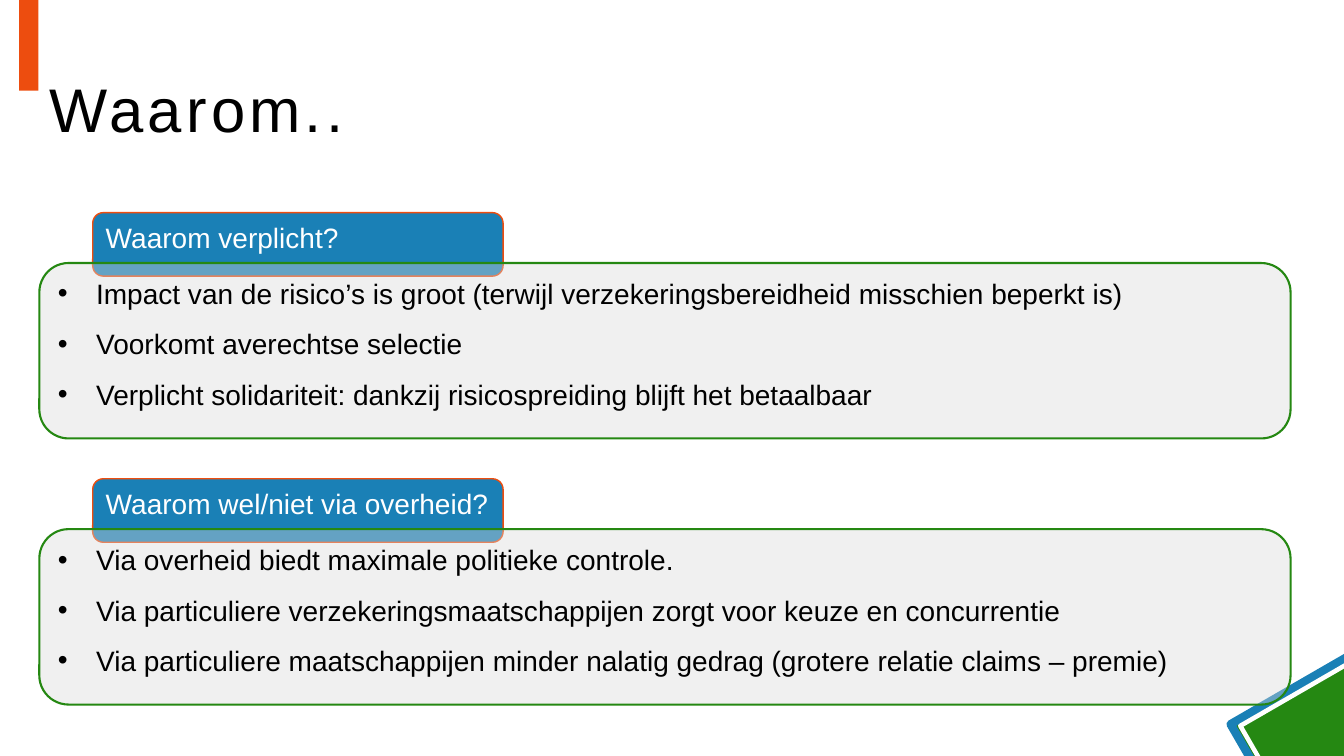
import pptx
import pptx.dml.color
import pptx.enum.shapes
import pptx.enum.text
import pptx.oxml.ns
import pptx.util
from lxml import etree

Inches, Pt = pptx.util.Inches, pptx.util.Pt
RGBColor = pptx.dml.color.RGBColor
Shape = pptx.enum.shapes.MSO_SHAPE
Anchor = pptx.enum.text.MSO_ANCHOR
Align = pptx.enum.text.PP_ALIGN
qn = pptx.oxml.ns.qn

# Content
TITLE = "Waarom.."
SECTIONS = [
    ("Waarom verplicht?", [
        "Impact van de risico’s is groot (terwijl verzekeringsbereidheid misschien beperkt is)",
        "Voorkomt averechtse selectie",
        "Verplicht solidariteit: dankzij risicospreiding blijft het betaalbaar",
    ]),
    ("Waarom wel/niet via overheid?", [
        "Via overheid biedt maximale politieke controle.",
        "Via particuliere verzekeringsmaatschappijen zorgt voor keuze en concurrentie",
        "Via particuliere maatschappijen minder nalatig gedrag (grotere relatie claims – premie)",
    ]),
]

# Style
FONT = "Arial"
BLACK = RGBColor(0x00, 0x00, 0x00)
WHITE = RGBColor(0xFF, 0xFF, 0xFF)
GREEN = RGBColor(0x25, 0x88, 0x12)
BLUE = RGBColor(0x1A, 0x80, 0xB6)
ORANGE = RGBColor(0xED, 0x4D, 0x0F)
GREY = RGBColor(0xD9, 0xD9, 0xD9)

# Layout in inches
FIRST_TOP, SECTION_STEP = 2.11, 2.64
PANEL_OFFSET = 0.5
BULLET_INDENT = 0.38


def add_block(page, kind, place, fill=None, line=None, width=0):
    block = page.shapes.add_shape(kind, *map(Inches, place))
    block.shadow.inherit = False
    if fill is None:
        block.fill.background()
    else:
        block.fill.solid()
        block.fill.fore_color.rgb = fill
    if line is None:
        block.line.fill.background()
    else:
        block.line.color.rgb = line
        block.line.width = Pt(width)
    return block


def style_font(para, size, color):
    para.font.name = FONT
    para.font.size = Pt(size)
    para.font.color.rgb = color


def write_lines(block, lines, color):
    frame = block.text_frame
    frame.word_wrap = True
    frame.vertical_anchor = Anchor.TOP
    for number, line in enumerate(lines):
        para = frame.add_paragraph() if number else frame.paragraphs[0]
        para.text = line
        para.alignment = Align.LEFT
        style_font(para, 20, color)


def add_bullets(block):
    for number, para in enumerate(block.text_frame.paragraphs):
        para.space_before = Pt(6 if number else 18)
        para.space_after = Pt(6)
        properties = para._p.get_or_add_pPr()
        properties.set("marL", str(Inches(BULLET_INDENT)))
        properties.set("indent", str(-Inches(BULLET_INDENT)))
        etree.SubElement(properties, qn("a:buFont")).set("typeface", FONT)
        etree.SubElement(properties, qn("a:buChar")).set("char", "•")
        # Bullet elements precede the default run properties
        properties.append(properties.find(qn("a:defRPr")))


def set_opacity(block, percent):
    color = block.fill._xPr.find(qn("a:solidFill"))[0]
    etree.SubElement(color, qn("a:alpha")).set("val", str(percent * 1000))


def add_decoration(page):
    add_block(page, Shape.RECTANGLE, (12.48, 6.71, 1.5, 1.5), GREEN, BLUE, 6).rotation = 60
    add_block(page, Shape.RECTANGLE, (12.55, 6.77, 1.36, 1.36), None, WHITE, 3.25).rotation = 60
    add_block(page, Shape.RECTANGLE, (0.19, -0.25, 0.19, 1.15), ORANGE)


def add_title(page):
    title = page.shapes.title
    title.left, title.top, title.width, title.height = map(Inches, (0.39, 0.39, 12.61, 1.45))
    title.text_frame.text = TITLE
    title.text_frame.vertical_anchor = Anchor.MIDDLE
    para = title.text_frame.paragraphs[0]
    para.alignment = Align.LEFT
    para.line_spacing = 0.9
    style_font(para, 44, BLACK)
    para.runs[0].font._element.set("spc", "300")


def add_section(page, top, heading, points):
    label = add_block(page, Shape.ROUNDED_RECTANGLE, (0.92, top, 4.07, 0.63), BLUE, ORANGE, 1)
    write_lines(label, [heading], WHITE)
    panel = add_block(page, Shape.ROUNDED_RECTANGLE,
                      (0.39, top + PANEL_OFFSET, 12.41, 1.74), GREY, GREEN, 1.5)
    set_opacity(panel, 39)
    write_lines(panel, points, BLACK)
    add_bullets(panel)


def main():
    deck = pptx.Presentation()
    deck.slide_width, deck.slide_height = Inches(13.33), Inches(7.5)
    page = deck.slides.add_slide(deck.slide_layouts[5])
    add_decoration(page)
    add_title(page)
    for number, (heading, points) in enumerate(SECTIONS):
        add_section(page, FIRST_TOP + number * SECTION_STEP, heading, points)
    deck.save("out.pptx")


if __name__ == "__main__":
    main()
